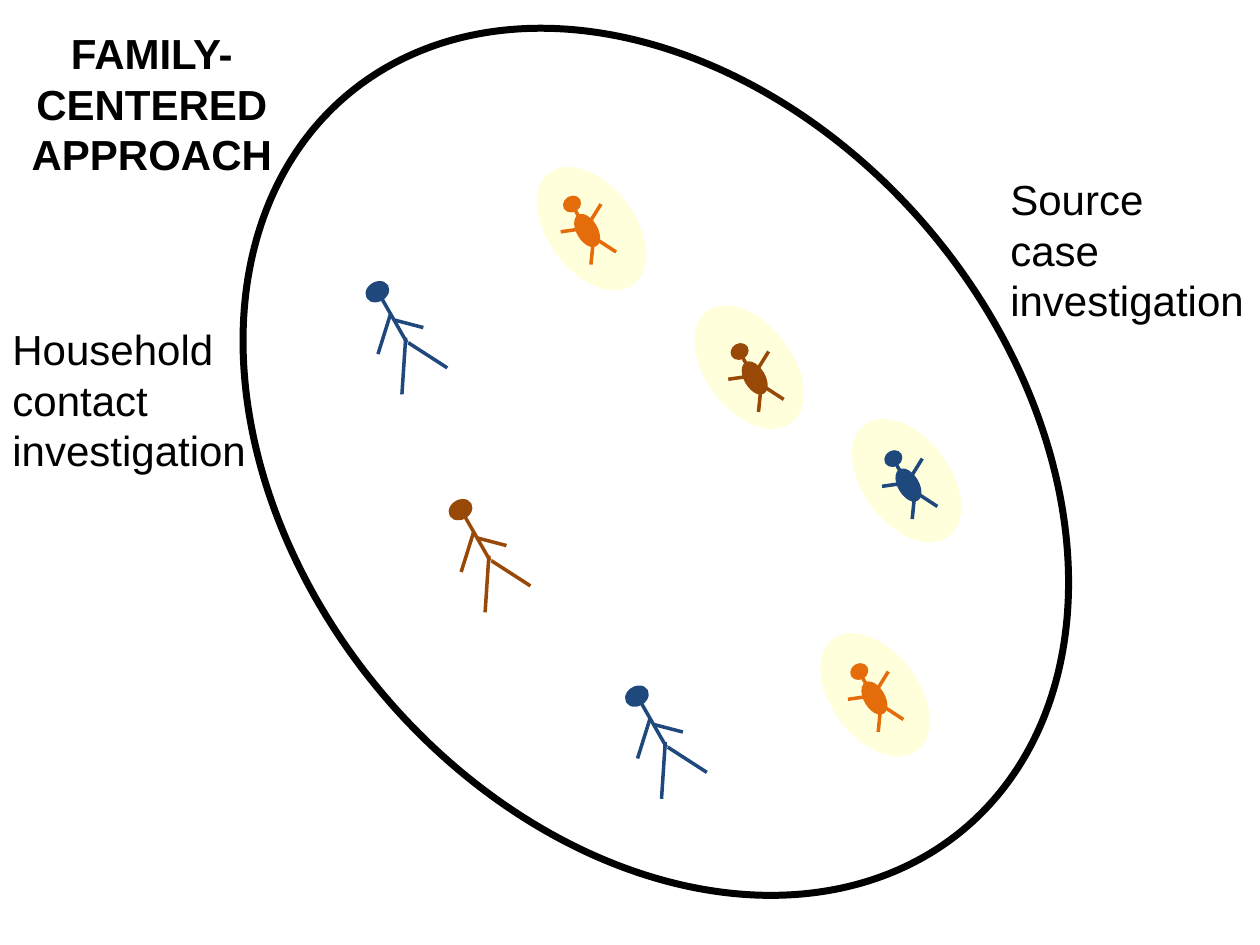
import dataclasses
import typing

import lxml.etree
import pptx
import pptx.dml.color
import pptx.enum.shapes
import pptx.enum.text
import pptx.oxml.ns
import pptx.util

COLUMNS, ROWS = 100, 75
NAVY, BROWN, ORANGE = "1F497D", "984807", "E46C0A"
BLACK, GLOW = "000000", "FFFF99"
LEAN = 329.6


class Point(typing.NamedTuple):
    column: float
    row: float


class Oval(typing.NamedTuple):
    column: float
    row: float
    width: float
    height: float


class Limb(typing.NamedTuple):
    start: Point
    end: Point


@dataclasses.dataclass(frozen=True)
class Body:
    """Ovals and limbs of a figure, measured from the corner of its head."""
    head: Oval
    limbs: tuple[Limb, ...]
    torso: Oval | None = None


@dataclasses.dataclass(frozen=True)
class Person:
    body: Body
    corner: Point
    colour: str
    glow: Point | None = None


@dataclasses.dataclass(frozen=True)
class Label:
    corner: Point
    lines: tuple[str, ...]


ADULT = Body(
    Oval(0, 0, 1.7, 1.3),
    (
        Limb(Point(1.2, 1.2), Point(3.2, 4.7)),
        Limb(Point(3.1, 4.3), Point(2.8, 8.8)),
        Limb(Point(3.3, 4.7), Point(6.4, 6.7)),
        Limb(Point(1.9, 2.4), Point(0.9, 5.6)),
        Limb(Point(4.5, 3.5), Point(2.2, 2.9)),
    ),
)
CHILD = Body(
    Oval(0, 0, 1.2, 1),
    (
        Limb(Point(0.8, 0.9), Point(2.3, 3.5)),
        Limb(Point(2.4, 2.3), Point(2.1, 5.3)),
        Limb(Point(1.8, 2.8), Point(4.1, 4.3)),
        Limb(Point(1.8, 2.4), Point(-0.3, 2.7)),
        Limb(Point(2.9, 0.5), Point(1.6, 2.6)),
    ),
    Oval(1.1, 1.3, 1.4, 2.6),
)
FAMILY = (
    Person(ADULT, Point(29.1, 22.5), NAVY),
    Person(ADULT, Point(49.7, 54.6), NAVY),
    Person(ADULT, Point(35.7, 39.8), BROWN),
    Person(CHILD, Point(70.3, 35.9), NAVY, Point(66.4, 34.7)),
    Person(CHILD, Point(58.1, 27.4), BROWN, Point(53.9, 25.7)),
    Person(CHILD, Point(44.8, 15.7), ORANGE, Point(41.4, 14.7)),
    Person(CHILD, Point(67.6, 52.8), ORANGE, Point(63.9, 51.7)),
)
HEADING = Label(Point(0.8, 1.7), ("FAMILY-CENTERED", "APPROACH"))
LABELS = (
    Label(Point(79.2, 13.3), ("Source", "case", "investigation")),
    Label(Point(0, 25.2), ("Household", "contact", "investigation")),
)
LABEL_SIZE = Point(22.5, 13.1)
GLOW_SIZE = Point(11.1, 6.9)
HOUSEHOLD = Oval(14, 8.2, 76.1, 56.9)

deck = pptx.Presentation()
deck.slide_width, deck.slide_height = pptx.util.Inches(10), pptx.util.Inches(7.5)


def across(columns: float) -> int:
    """Turn grid columns into a slide length."""
    return round(deck.slide_width * columns / COLUMNS)


def down(rows: float) -> int:
    """Turn grid rows into a slide length."""
    return round(deck.slide_height * rows / ROWS)


def rgb(colour: str) -> pptx.dml.color.RGBColor:
    """Read a hex string as a colour."""
    return pptx.dml.color.RGBColor.from_string(colour)


def apply(target: typing.Any, formats: dict[str, typing.Any]) -> None:
    """Set each attribute named in the formats."""
    for name, value in formats.items():
        setattr(target, name, value)


def draw_line(line: typing.Any, colour: str, points: float) -> None:
    """Colour a line and set its width."""
    line.color.rgb = rgb(colour)
    line.width = pptx.util.Pt(points)


def draw_oval(shapes: typing.Any, oval: Oval, turn: float, fill: str | None = None,
              outline: str | None = None, points: float = 2,
              corner: Point = Point(0, 0)) -> typing.Any:
    """Draw a turned ellipse, offset from a corner."""
    ellipse = shapes.add_shape(
        pptx.enum.shapes.MSO_SHAPE.OVAL,
        across(corner.column + oval.column), down(corner.row + oval.row),
        across(oval.width), down(oval.height))
    ellipse.rotation = turn
    ellipse.shadow.inherit = False
    if fill:
        ellipse.fill.solid()
        ellipse.fill.fore_color.rgb = rgb(fill)
    else:
        ellipse.fill.background()
    if outline:
        draw_line(ellipse.line, outline, points)
    else:
        ellipse.line.fill.background()
    return ellipse


def draw_glow(shapes: typing.Any, corner: Point) -> None:
    """Draw the pale see-through halo of a child."""
    halo = draw_oval(shapes, Oval(*corner, *GLOW_SIZE), 52.9, GLOW)
    tint = next(halo.element.spPr.iter(pptx.oxml.ns.qn("a:srgbClr")))
    lxml.etree.SubElement(tint, pptx.oxml.ns.qn("a:alpha"), val="34000")


def draw_person(shapes: typing.Any, person: Person) -> None:
    """Draw one figure as a group of limbs and ovals."""
    figure = shapes.add_group_shape().shapes
    body, corner, colour = person.body, person.corner, person.colour
    draw_oval(figure, body.head, LEAN, colour, colour, corner=corner)
    for start, end in body.limbs:
        limb = figure.add_connector(
            pptx.enum.shapes.MSO_CONNECTOR.STRAIGHT,
            across(corner.column + start.column), down(corner.row + start.row),
            across(corner.column + end.column), down(corner.row + end.row))
        draw_line(limb.line, colour, 2)
        lxml.etree.SubElement(limb.element.spPr, pptx.oxml.ns.qn("a:effectLst"))
    if body.torso:
        draw_oval(figure, body.torso, LEAN, colour, colour, corner=corner)


def write_label(box: typing.Any, label: Label, align: typing.Any, bold: bool) -> None:
    """Place a text holder and write its lines."""
    apply(box, {"left": across(label.corner.column), "top": down(label.corner.row),
                "width": across(LABEL_SIZE.column), "height": down(LABEL_SIZE.row)})
    apply(box.text_frame, {"text": "\n".join(label.lines), "word_wrap": True,
                           "auto_size": pptx.enum.text.MSO_AUTO_SIZE.NONE,
                           "vertical_anchor": pptx.enum.text.MSO_ANCHOR.TOP})
    for paragraph in box.text_frame.paragraphs:
        paragraph.alignment = align
        for run in paragraph.runs:
            apply(run.font, {"name": "Arial", "size": pptx.util.Pt(24), "bold": bold})
            run.font.color.rgb = rgb(BLACK)


def main() -> None:
    """Build the slide and save it."""
    slide = deck.slides.add_slide(deck.slide_layouts.get_by_name("Title Only"))
    shapes = slide.shapes
    write_label(shapes.title, HEADING, pptx.enum.text.PP_ALIGN.CENTER, True)
    for person in FAMILY:
        if person.glow:
            draw_glow(shapes, person.glow)
        draw_person(shapes, person)
    for label in LABELS:
        write_label(shapes.add_textbox(0, 0, 0, 0), label,
                    pptx.enum.text.PP_ALIGN.LEFT, False)
    draw_oval(shapes, HOUSEHOLD, 50, outline=BLACK, points=4)
    deck.save("out.pptx")


if __name__ == "__main__":
    main()
